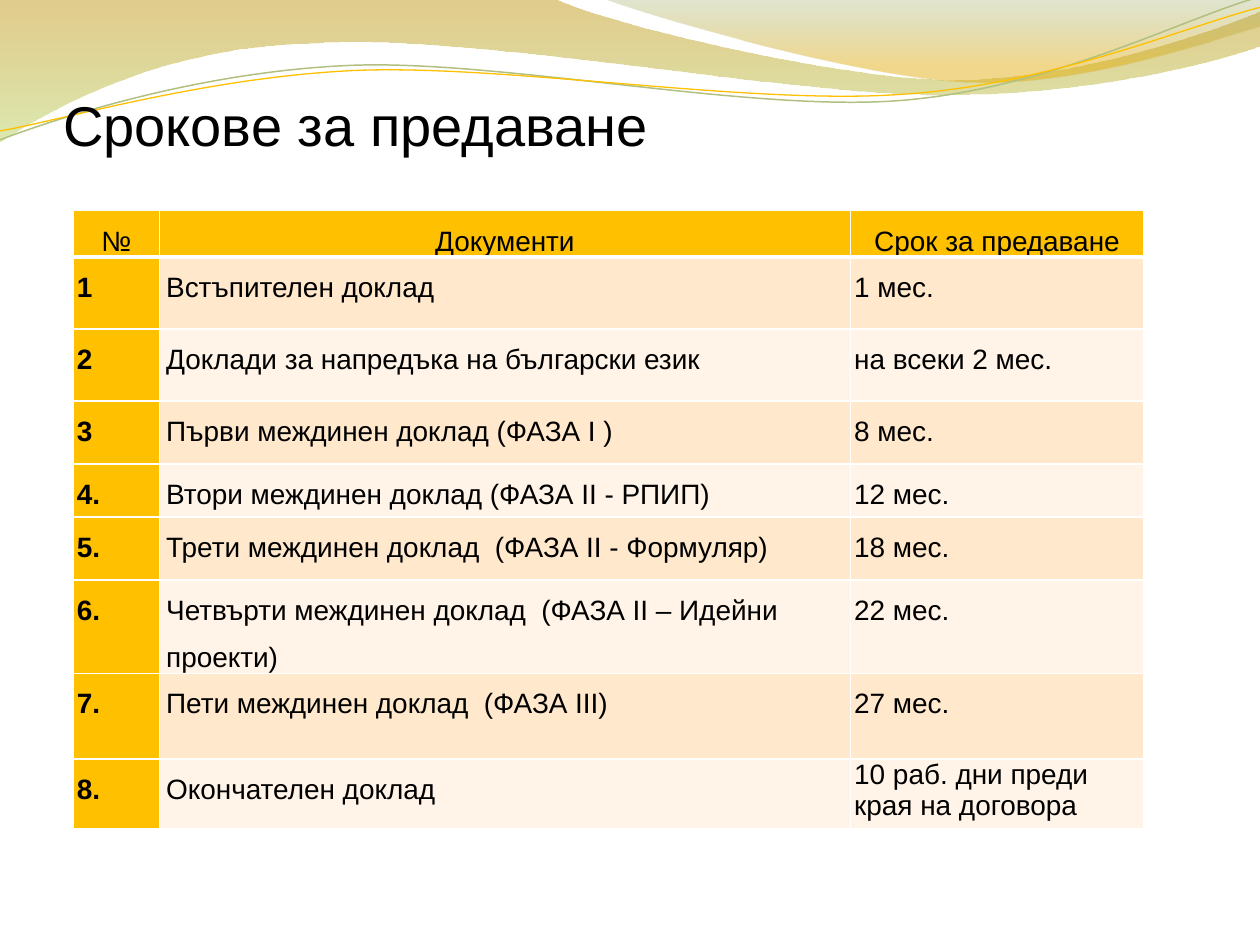
from lxml import etree
from pptx import Presentation
from pptx import util as u
from pptx.dml.color import RGBColor
from pptx.enum import text
from pptx.oxml import ns, parse_xml

Cm, Pt = u.Cm, u.Pt
HUES = {"ink": "000000", "gold": "FFC000", "dark": "FFE8CC", "pale": "FFF4E7",
        "white": "FFFFFF", "sage": "B1C080", "ochre": "BD8E00",
        "lime": "C0D871", "moss": "99A963", "amber": "E1A900"}
URI = 'xmlns:a="http://schemas.openxmlformats.org/drawingml/2006/main"'

deck = Presentation()
deck.slide_width, deck.slide_height = Cm(25.4), Cm(19.05)
slide = deck.slides.add_slide(deck.slide_layouts[5])


def trace(start, parts, close):
    """Draw a path in 0.01 cm; a part is an end point or three Bezier points."""
    ends = [part[-2:] for part in parts]
    pen = slide.shapes.build_freeform(*start, scale=Cm(0.01))
    pen.add_line_segments(ends, close=close)
    shape = pen.convert_to_shape()
    shape.shadow.inherit = False
    left, top = (min(axis) for axis in zip(start, *ends))
    outline = shape.element.find(".//" + ns.qn("a:path"))
    for straight, part in zip(outline.findall(ns.qn("a:lnTo")), parts):
        if len(part) == 6:
            bend = etree.Element(ns.qn("a:cubicBezTo"))
            for x, y in zip(part[::2], part[1::2]):
                etree.SubElement(bend, ns.qn("a:pt"), x=str(x - left), y=str(y - top))
            outline.replace(straight, bend)
    return shape


def write(para, words, size, bold=False):
    run = para.add_run()
    run.text = words
    run.font.name, run.font.size, run.font.bold = "Arial", Pt(size), bold
    run.font.color.rgb = RGBColor.from_string(HUES["ink"])


# Filled waves: start, parts, gradient stops (position, hue, opacity)
waves = [
    ((0, 0), [(1118, -3), (1209, 43, 1687, 160, 1925, 160),
              (2167, 160, 2433, 66, 2540, 23), (2543, 91),
              (2497, 112, 2210, 193, 1895, 191),
              (1580, 191, 970, 71, 653, 86),
              (328, 91, 117, 211, -3, 287)],
     [(0, "ochre", 45), (100, "lime", 55)]),
    ((1217, -3), [(1293, 28, 1732, 157, 1953, 165),
                  (2174, 175, 2441, 81, 2540, 53), (2540, 0)],
     [(0, "moss", 30), (80, "amber", 45)]),
]
for start, parts, stops in waves:
    wave = trace(start, parts, True)
    wave.line.fill.background()
    wave.fill.gradient()
    grad = wave.element.spPr.find(ns.qn("a:gradFill"))
    marks = "".join(
        f'<a:gs pos="{pos * 1000}"><a:srgbClr val="{HUES[hue]}">'
        f'<a:alpha val="{alpha * 1000}"/></a:srgbClr></a:gs>' for pos, hue, alpha in stops)
    fresh = parse_xml(f'<a:gradFill {URI} rotWithShape="1"><a:gsLst>{marks}</a:gsLst>'
                      '<a:lin ang="5400000" scaled="0"/></a:gradFill>')
    grad.getparent().replace(grad, fresh)

# Thin wave lines
lines = [
    ((0, 282), [(122, 236, 401, 145, 704, 132),
                (1003, 119, 1506, 226, 1811, 203),
                (2116, 180, 2383, 38, 2535, -5)], "sage", 0.85),
    ((0, 264), [(119, 244, 417, 155, 719, 142),
                (1024, 130, 1516, 213, 1821, 190),
                (2123, 170, 2390, 53, 2540, 15)], "gold", 0.75),
]
for start, parts, hue, width in lines:
    curve = trace(start, parts, False)
    curve.fill.background()
    curve.line.color.rgb = RGBColor.from_string(HUES[hue])
    curve.line.width = Pt(width)

# Title, in front of the waves
title = slide.shapes.title
slide.shapes.element.append(title.element)
title.left, title.top, title.width, title.height = Cm(1.27), Cm(0), Cm(22.86), Cm(3.18)
frame = title.text_frame
frame.margin_left = frame.margin_right = frame.margin_bottom = 0
frame.margin_top = Cm(0.13)
frame.vertical_anchor = text.MSO_ANCHOR.BOTTOM
frame.paragraphs[0].alignment = text.PP_ALIGN.LEFT
write(frame.paragraphs[0], "Срокове за предаване", 32)

# Table of deadlines
rows = [
    ("№", "Документи", "Срок за предаване"),
    ("1", "Встъпителен доклад", "1 мес."),
    ("2", "Доклади за напредъка на български език", "на всеки 2 мес."),
    ("3", "Първи междинен доклад (ФАЗА I )", "8 мес."),
    ("4.", "Втори междинен доклад (ФАЗА II - РПИП)", "12 мес."),
    ("5.", "Трети междинен доклад  (ФАЗА II - Формуляр)", "18 мес."),
    ("6.", "Четвърти междинен доклад  (ФАЗА II – Идейни проекти)", "22 мес."),
    ("7.", "Пети междинен доклад  (ФАЗА III)", "27 мес."),
    ("8.", "Окончателен доклад", "10 раб. дни преди края на договора"),
]
tall = [0.28, 1.45, 1.45, 1.27, 1.07, 1.27, 1.27, 1.73, 1.4]
wide = [1.75, 13.92, 5.92]
box = slide.shapes.add_table(len(rows), 3, Cm(1.47), Cm(4.24), Cm(21.59), Cm(12.67))
grid = box.table
grid.first_row = grid.horz_banding = False
for col, width in zip(grid.columns, wide):
    col.width = Cm(width)
for row, height in zip(grid.rows, tall):
    row.height = Cm(height)
box.height = Cm(12.67)

for r, row in enumerate(rows):
    for c, words in enumerate(row):
        cell = grid.cell(r, c)
        cell.margin_left = cell.margin_right = Cm(0.08)
        cell.margin_top = cell.margin_bottom = 0
        hue = "gold" if r == 0 or c == 0 else "dark" if r % 2 else "pale"
        cell.fill.solid()
        cell.fill.fore_color.rgb = RGBColor.from_string(HUES[hue])

        para = cell.text_frame.paragraphs[0]
        if (r, c) != (len(rows) - 1, 2):
            para.line_spacing = 1.5
        if r == 0:
            para.alignment = text.PP_ALIGN.CENTER
        elif c == 1:
            para._p.get_or_add_pPr().set("marL", str(Cm(0.05)))
        write(para, words, 16, bold=r > 0 and c == 0)

        # White rules, thick below the header
        props = cell._tc.get_or_add_tcPr()
        for i, side in enumerate("LRTB"):
            thick = (side == "B" and r == 0) or (side == "T" and r == 1)
            rule = etree.Element(ns.qn(f"a:ln{side}"), w=str(Pt(3 if thick else 1)))
            fill = etree.SubElement(rule, ns.qn("a:solidFill"))
            etree.SubElement(fill, ns.qn("a:srgbClr"), val=HUES["white"])
            props.insert(i, rule)

deck.save("out.pptx")
